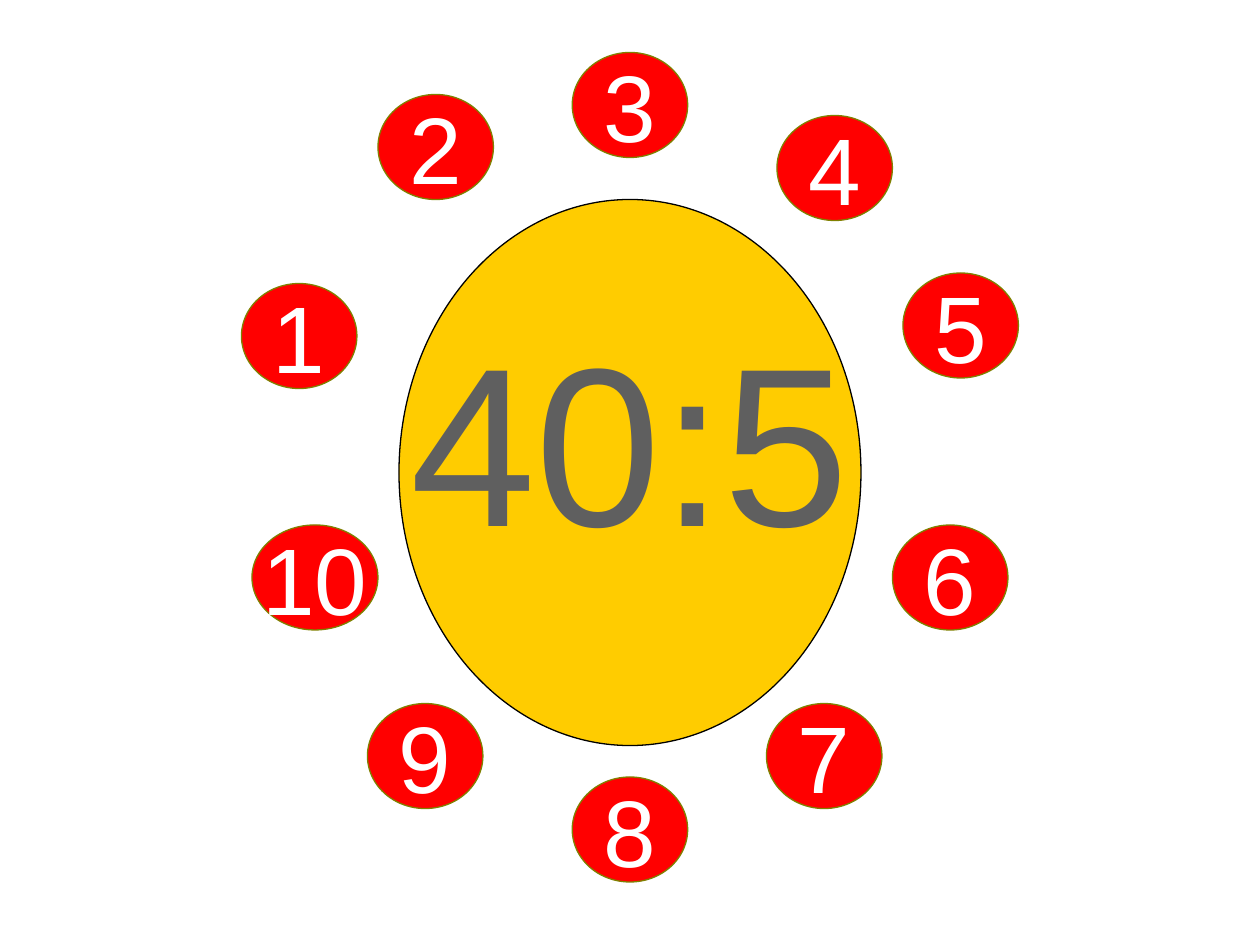
from dataclasses import dataclass

from pptx import Presentation
from pptx.dml.color import RGBColor
from pptx.enum.shapes import MSO_SHAPE as Preset
from pptx.enum.text import MSO_ANCHOR as Anchor, PP_ALIGN as Align
from pptx.shapes.autoshape import Shape
from pptx.shapes.shapetree import SlideShapes
from pptx.util import Pt


@dataclass(frozen=True)
class Theme:
    font: str = "Arial"
    disc: RGBColor = RGBColor(0xFF, 0xCC, 0x00)
    disc_line: RGBColor = RGBColor(0x00, 0x00, 0x00)
    task: RGBColor = RGBColor(0x5F, 0x5F, 0x5F)
    ball: RGBColor = RGBColor(0xFF, 0x00, 0x00)
    ball_line: RGBColor = RGBColor(0x80, 0x80, 0x00)
    number: RGBColor = RGBColor(0xFF, 0xFF, 0xFF)
    line_width: float = 0.75
    task_size: int = 129
    number_size: int = 54


@dataclass(frozen=True)
class Ball:
    """A numbered ball, placed by its top left corner in points."""
    number: int
    left: float
    top: float
    width: float = 66
    height: float = 60


THEME = Theme()
BALLS = (
    Ball(8, 327, 444),
    Ball(2, 216, 54),
    Ball(3, 327, 30),
    Ball(4, 444, 66),
    Ball(5, 516, 156),
    Ball(6, 510, 300),
    Ball(7, 438, 402),
    Ball(1, 138, 162),
    Ball(9, 210, 402),
    Ball(10, 144, 300, width=72),
)


def paint(shape: Shape, fill: RGBColor, line: RGBColor) -> None:
    shape.shadow.inherit = False
    shape.fill.solid()
    shape.fill.fore_color.rgb = fill
    shape.line.color.rgb = line
    shape.line.width = Pt(THEME.line_width)


def write_centred(box: Shape, text: str, size: int, color: RGBColor) -> None:
    frame = box.text_frame
    frame.word_wrap = False
    frame.vertical_anchor = Anchor.MIDDLE
    para = frame.paragraphs[0]
    para.alignment = Align.CENTER
    span = para.add_run()
    span.text = text
    span.font.name = THEME.font
    span.font.size = Pt(size)
    span.font.color.rgb = color


def draw_disc(shapes: SlideShapes) -> None:
    disc = shapes.add_shape(Preset.OVAL, Pt(228), Pt(114), Pt(264), Pt(312))
    paint(disc, THEME.disc, THEME.disc_line)


def draw_task(shapes: SlideShapes) -> None:
    box = shapes.add_textbox(Pt(180), Pt(114), Pt(360), Pt(270))
    write_centred(box, "40:5", THEME.task_size, THEME.task)


def draw_ball(shapes: SlideShapes, ball: Ball) -> None:
    shape = shapes.add_shape(
        Preset.FLOWCHART_CONNECTOR,
        Pt(ball.left), Pt(ball.top), Pt(ball.width), Pt(ball.height),
    )
    paint(shape, THEME.ball, THEME.ball_line)
    write_centred(shape, str(ball.number), THEME.number_size, THEME.number)


def main() -> None:
    deck = Presentation()
    deck.slide_width, deck.slide_height = Pt(720), Pt(540)
    page = deck.slides.add_slide(deck.slide_layouts[6])
    draw_disc(page.shapes)
    draw_task(page.shapes)
    for ball in BALLS:
        draw_ball(page.shapes, ball)
    deck.save("out.pptx")


if __name__ == "__main__":
    main()
